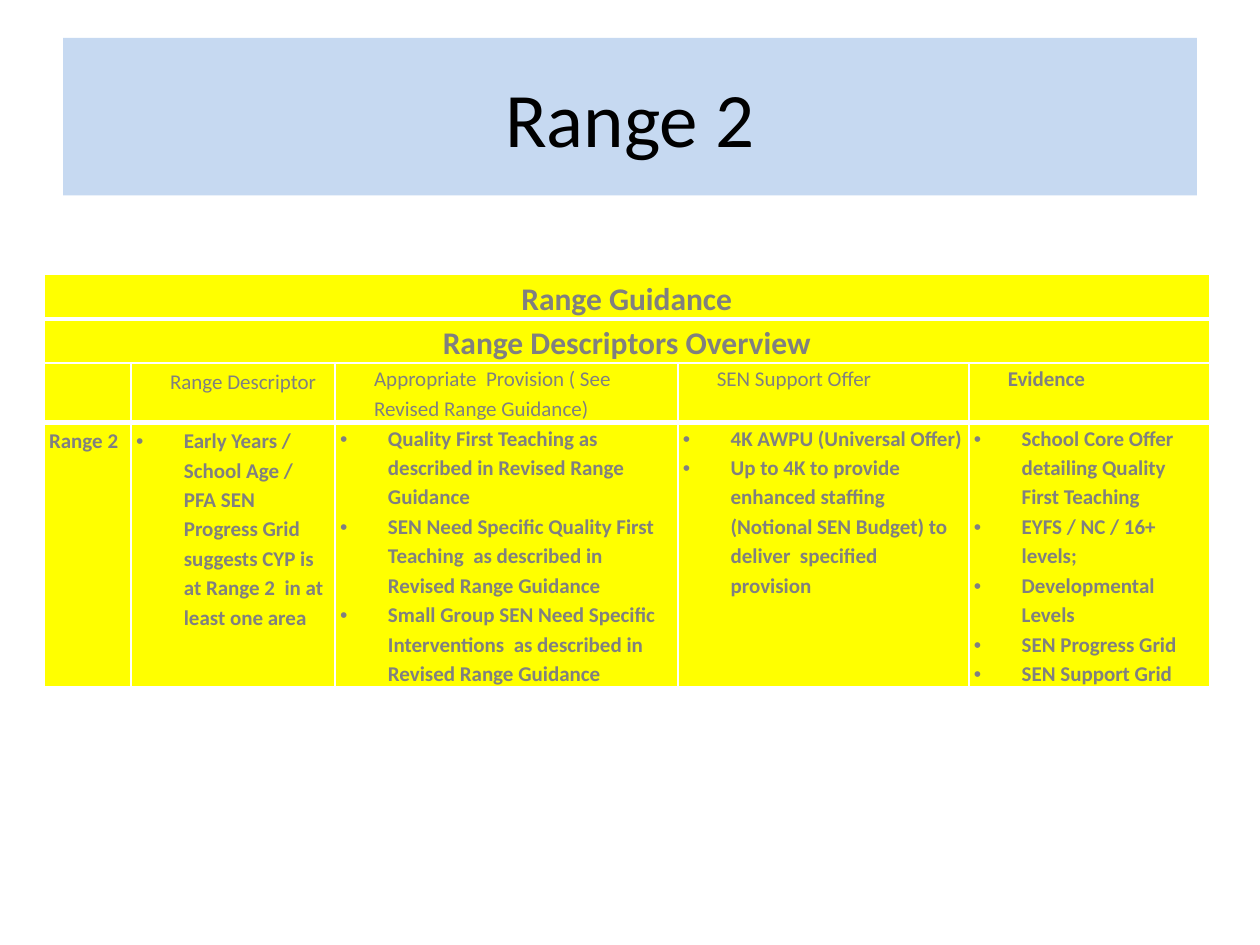
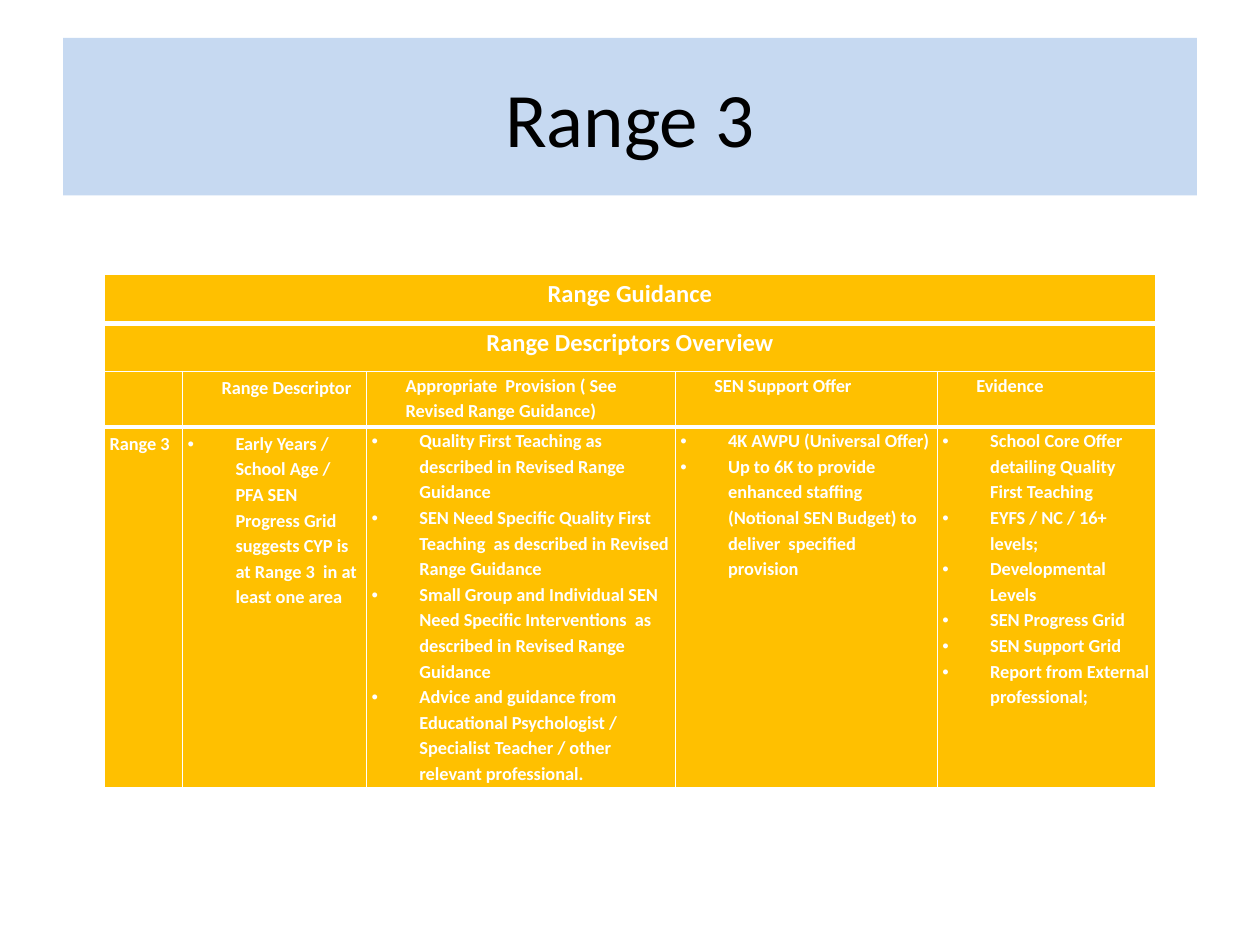
from lxml.etree import SubElement
from pptx import Presentation
from pptx.dml.color import RGBColor
from pptx.enum.text import MSO_ANCHOR, PP_ALIGN
from pptx.oxml.ns import qn
from pptx.util import Inches, Pt

BLACK = RGBColor(0x00, 0x00, 0x00)
WHITE = RGBColor(0xFF, 0xFF, 0xFF)
GREY = RGBColor(0x80, 0x80, 0x80)
PALE_BLUE = RGBColor(0xC6, 0xD9, 0xF1)
YELLOW = RGBColor(0xFF, 0xFF, 0x00)
AMBER = RGBColor(0xFF, 0xC0, 0x00)
FONT = "Calibri"

BANNERS = ["Range Guidance", "Range Descriptors Overview"]
HEADINGS = ["", "Range Descriptor", "Appropriate  Provision ( See Revised Range Guidance)",
            "SEN Support Offer", "Evidence"]
DESCRIPTOR = ("Early Years / School Age / PFA SEN Progress Grid suggests "
              "CYP is at {}  in at least one area")
TEACHING = ["Quality First Teaching as described in Revised Range Guidance",
            "SEN Need Specific Quality First Teaching  as described in Revised Range Guidance"]
INTERVENTIONS = "{} SEN Need Specific Interventions  as described in Revised Range Guidance"
OFFER = ["4K AWPU (Universal Offer)",
         "Up to {} to provide enhanced staffing (Notional SEN Budget) "
         "to deliver  specified  provision"]
EVIDENCE = ["School Core Offer detailing Quality First Teaching", "EYFS / NC / 16+ levels;",
            "Developmental Levels", "SEN Progress Grid", "SEN Support Grid"]

RANGES = [
    dict(name="Range 2", fill=YELLOW, ink=GREY, banner_pt=18, body_pt=12,
         bold_headings={"Evidence"}, left=0.35,
         cols=[0.69, 1.62, 2.72, 2.31, 1.91], rows=[0.34, 0.34, 0.47, 2.08],
         groups="Small Group", budget="4K", more_provision=[], more_evidence=[]),
    dict(name="Range 3", fill=AMBER, ink=WHITE, banner_pt=14, body_pt=10.5,
         bold_headings=set(HEADINGS), left=0.83,
         cols=[0.62, 1.46, 2.45, 2.08, 1.73], rows=[0.39, 0.38, 0.44, 2.86],
         groups="Small Group and Individual", budget="6K",
         more_provision=["Advice and guidance from Educational Psychologist / "
                         "Specialist Teacher / other relevant professional."],
         more_evidence=["Report from External professional;"]),
]

TABLE_TOP = 2.18
HEADING_INDENT, BULLET_INDENT = 0.27, 0.38
THIN, THICK = 1, 3
LAST_ROW = 3


def add_title(s, text):
    sp = s.shapes.title
    sp.left, sp.top, sp.width, sp.height = map(Inches, (0.5, 0.3, 9, 1.25))
    sp.fill.solid()
    sp.fill.fore_color.rgb = PALE_BLUE
    tf = sp.text_frame
    tf.vertical_anchor = MSO_ANCHOR.MIDDLE
    p = tf.paragraphs[0]
    p.alignment = PP_ALIGN.CENTER
    add_run(p, text, 44, BLACK, False)


def add_run(p, text, size, color, bold):
    r = p.add_run()
    r.text = text
    r.font.name = FONT
    r.font.size = Pt(size)
    r.font.bold = bold
    r.font.color.rgb = color


def add_borders(cell, row):
    widths = {"a:lnL": THIN, "a:lnR": THIN,
              "a:lnT": THICK if row in (1, LAST_ROW) else THIN,
              "a:lnB": THICK if row in (0, LAST_ROW - 1) else THIN}
    tcPr = cell._tc.get_or_add_tcPr()
    for tag, width in widths.items():
        ln = SubElement(tcPr, qn(tag), w=str(Pt(width)))
        SubElement(SubElement(ln, qn("a:solidFill")), qn("a:srgbClr"), val=str(WHITE))


def style_cell(cell, row, col, fill):
    add_borders(cell, row)
    cell.fill.solid()
    cell.fill.fore_color.rgb = fill
    cell.margin_left = cell.margin_right = Inches(0.04)
    cell.margin_top = cell.margin_bottom = Inches(0.02 if row > 1 and col < 2 else 0)


def add_lines(cell, lines, size, color, bold=True, indent=0, bullet=False, align=None):
    tf = cell.text_frame
    for i, text in enumerate(lines):
        p = tf.add_paragraph() if i else tf.paragraphs[0]
        pPr = p._p.get_or_add_pPr()
        if indent:
            pPr.set("marL", str(Inches(indent)))
            pPr.set("indent", str(Inches(-indent if bullet else 0)))
        if bullet:
            SubElement(pPr, qn("a:buFont"), typeface="Arial")
            SubElement(pPr, qn("a:buChar"), char="•")
        p.line_spacing = 1.15
        p.alignment = align
        add_run(p, text, size, color, bold)


def add_range_table(s, rng):
    cols, rows = rng["cols"], rng["rows"]
    frame = s.shapes.add_table(len(rows), len(cols), Inches(rng["left"]), Inches(TABLE_TOP),
                               Inches(sum(cols)), Inches(sum(rows)))
    tbl = frame.table
    tbl.first_row = tbl.horz_banding = False
    for column, width in zip(tbl.columns, cols):
        column.width = Inches(width)
    for row, height in zip(tbl.rows, rows):
        row.height = Inches(height)
    for i in range(len(rows)):
        for j in range(len(cols)):
            style_cell(tbl.cell(i, j), i, j, rng["fill"])

    ink, size = rng["ink"], rng["body_pt"]
    for i, banner in enumerate(BANNERS):
        tbl.cell(i, 0).merge(tbl.cell(i, len(cols) - 1))
        add_lines(tbl.cell(i, 0), [banner], rng["banner_pt"], ink, align=PP_ALIGN.CENTER)
    for j, heading in enumerate(HEADINGS):
        if heading:
            add_lines(tbl.cell(2, j), [heading], size, ink,
                      heading in rng["bold_headings"], HEADING_INDENT)

    name_cell = tbl.cell(LAST_ROW, 0)
    add_lines(name_cell, [rng["name"]], size, ink)
    name_cell.text_frame.paragraphs[0].space_after = Pt(10)
    details = [
        [DESCRIPTOR.format(rng["name"])],
        TEACHING + [INTERVENTIONS.format(rng["groups"])] + rng["more_provision"],
        [line.format(rng["budget"]) for line in OFFER],
        EVIDENCE + rng["more_evidence"],
    ]
    for j, lines in enumerate(details, start=1):
        add_lines(tbl.cell(LAST_ROW, j), lines, size, ink, indent=BULLET_INDENT, bullet=True)


def main():
    prs = Presentation()
    prs.slide_width, prs.slide_height = Inches(10), Inches(7.5)
    for rng in RANGES:
        s = prs.slides.add_slide(prs.slide_layouts[5])
        add_title(s, rng["name"])
        add_range_table(s, rng)
    prs.save("out.pptx")


if __name__ == "__main__":
    main()
